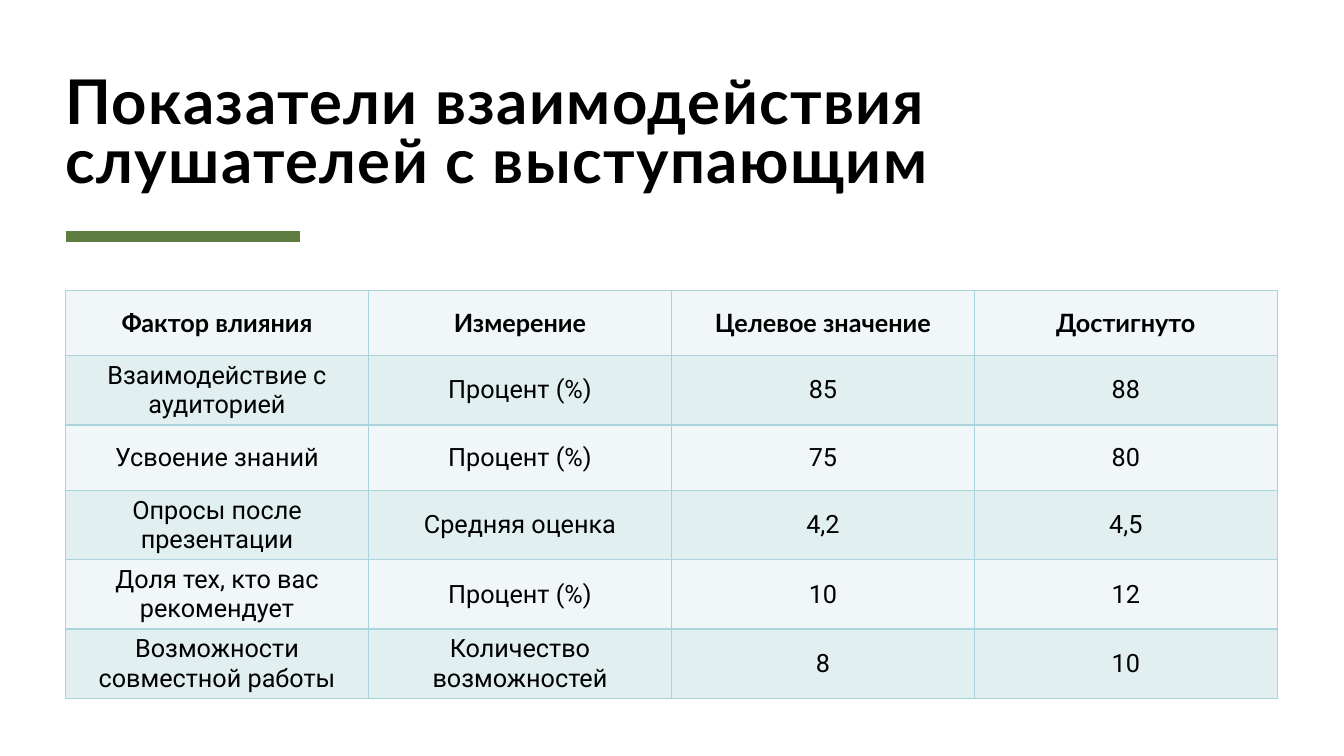
from dataclasses import dataclass

import pptx
import pptx.dml.color
import pptx.enum.shapes
import pptx.enum.text
import pptx.oxml
import pptx.oxml.ns
import pptx.util
from lxml import etree

Inches = pptx.util.Inches
Pt = pptx.util.Pt
RGB = pptx.dml.color.RGBColor.from_string
ALIGN = pptx.enum.text.PP_ALIGN
ANCHOR = pptx.enum.text.MSO_ANCHOR

TITLE = "Показатели взаимодействия слушателей с выступающим"
ROWS = [
    ("Фактор влияния", "Измерение", "Целевое значение", "Достигнуто"),
    ("Взаимодействие с аудиторией", "Процент (%)", "85", "88"),
    ("Усвоение знаний", "Процент (%)", "75", "80"),
    ("Опросы после презентации", "Средняя оценка", "4,2", "4,5"),
    ("Доля тех, кто вас рекомендует", "Процент (%)", "10", "12"),
    ("Возможности совместной работы", "Количество возможностей", "8", "10"),
]


@dataclass(frozen=True)
class Theme:
    text: str = "000000"
    accent: str = "5D7D40"
    border: str = "A9D4DB"
    bands: tuple = ("F1F7F8", "E2EFF1")
    heading_font: str = "Lato"
    body_font: str = "Roboto"
    title_size: int = 44
    table_size: int = 18
    accent_width: int = 8
    border_width: int = 1


class SlideBuilder:
    def __init__(self, prs, theme):
        self.theme = theme
        self.s = prs.slides.add_slide(prs.slide_layouts[5])

    def styled_run(self, p, text, size, name, bold):
        r = p.add_run()
        r.text = text
        for key, value in {"size": Pt(size), "name": name, "bold": bold}.items():
            setattr(r.font, key, value)
        r.font.color.rgb = RGB(self.theme.text)
        return r

    def title(self, text, left, top, width, height):
        sp = self.s.shapes.title
        box = {"left": left, "top": top, "width": width, "height": height}
        for key, value in box.items():
            setattr(sp, key, Inches(value))
        tf = sp.text_frame
        frame = {"margin_left": 0, "margin_top": 0, "margin_right": 0,
                 "margin_bottom": 0, "word_wrap": True,
                 "vertical_anchor": ANCHOR.BOTTOM,
                 "auto_size": pptx.enum.text.MSO_AUTO_SIZE.NONE}
        for key, value in frame.items():
            setattr(tf, key, value)
        p = tf.paragraphs[0]
        for key, value in {"alignment": ALIGN.LEFT, "line_spacing": 0.8,
                           "space_before": Pt(0)}.items():
            setattr(p, key, value)
        r = self.styled_run(p, text, self.theme.title_size,
                            self.theme.heading_font, True)
        r.font._element.set("spc", "100")

    def accent_line(self, left, top, width):
        line = self.s.shapes.add_connector(
            pptx.enum.shapes.MSO_CONNECTOR.STRAIGHT,
            Inches(left), Inches(top), Inches(left + width), Inches(top))
        line.line.color.rgb = RGB(self.theme.accent)
        line.line.width = Pt(self.theme.accent_width)
        etree.SubElement(line._element.spPr, pptx.oxml.ns.qn("a:effectLst"))

    def cell_borders(self, cell):
        tc_pr = cell._tc.get_or_add_tcPr()
        for side in ("lnL", "lnR", "lnT", "lnB"):
            tc_pr.append(pptx.oxml.parse_xml(
                f'<a:{side} {pptx.oxml.ns.nsdecls("a")} w="{Pt(self.theme.border_width)}">'
                f'<a:solidFill><a:srgbClr val="{self.theme.border}"/></a:solidFill>'
                f'</a:{side}>'))

    def table(self, rows, left, top, width, row_height):
        theme = self.theme
        table = self.s.shapes.add_table(
            len(rows), len(rows[0]), Inches(left), Inches(top),
            Inches(width), Inches(row_height * len(rows))).table
        for i, row in enumerate(rows):
            table.rows[i].height = Inches(row_height)
            font = theme.body_font if i else theme.heading_font
            for j, text in enumerate(row):
                cell = table.cell(i, j)
                self.cell_borders(cell)
                cell.fill.solid()
                cell.fill.fore_color.rgb = RGB(theme.bands[i % 2])
                cell.vertical_anchor = ANCHOR.MIDDLE
                p = cell.text_frame.paragraphs[0]
                p.alignment = ALIGN.CENTER
                self.styled_run(p, text, theme.table_size, font, i == 0)


def main():
    prs = pptx.Presentation()
    prs.slide_width = Inches(13.33)
    prs.slide_height = Inches(7.5)
    slide = SlideBuilder(prs, Theme())
    left = 0.65
    slide.accent_line(left, 2.35, 2.33)
    slide.title(TITLE, left, 0.64, 12, 1.3)
    slide.table(ROWS, left, 2.88, 12.02, 0.65)
    prs.save("out.pptx")


if __name__ == "__main__":
    main()
